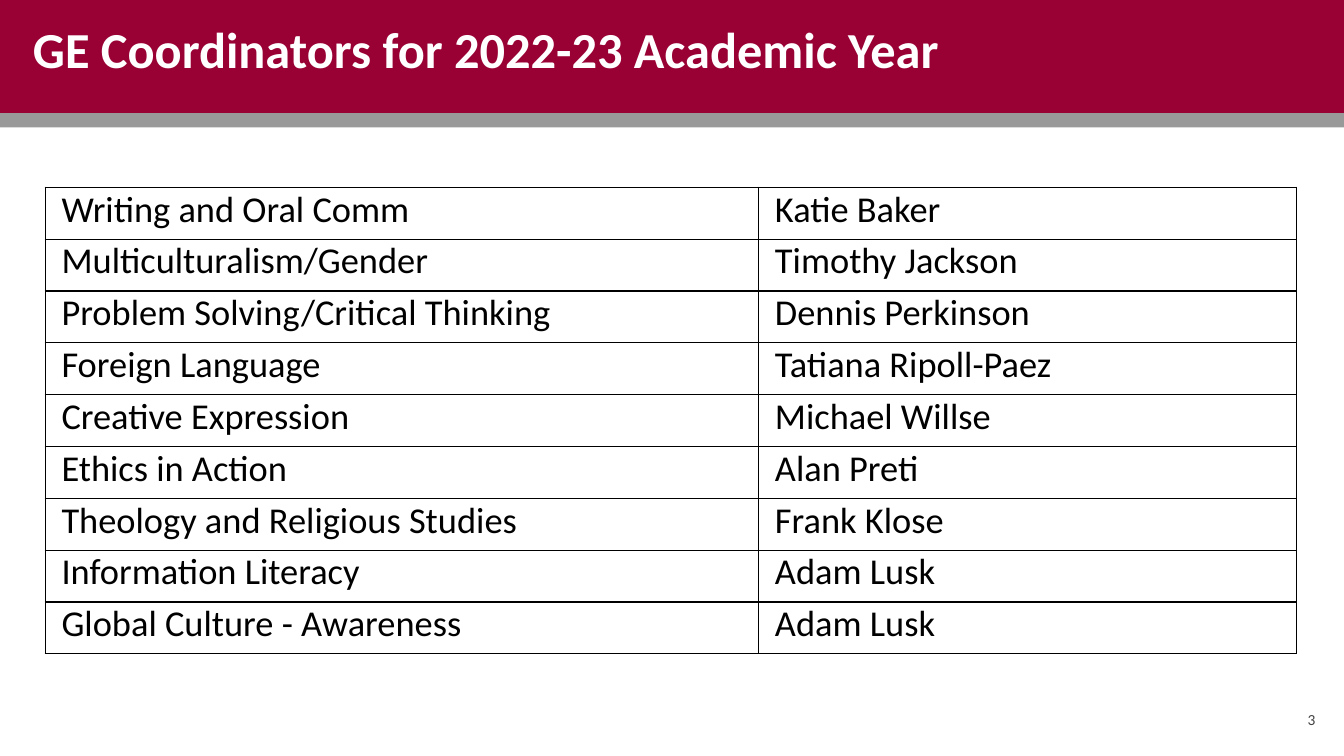
from lxml.etree import SubElement
from pptx import Presentation
from pptx.dml.color import RGBColor
from pptx.enum.shapes import MSO_SHAPE
from pptx.enum.text import MSO_ANCHOR, MSO_AUTO_SIZE, PP_ALIGN
from pptx.oxml.ns import qn
from pptx.util import Cm, Pt

COLORS = {
    "crimson": "990033",
    "gray": "999999",
    "white": "FFFFFF",
    "black": "000000",
    "page_number": "434343",
}

COORDINATORS = [
    ("Writing and Oral Comm", "Katie Baker"),
    ("Multiculturalism/Gender", "Timothy Jackson"),
    ("Problem Solving/Critical Thinking", "Dennis Perkinson"),
    ("Foreign Language", "Tatiana Ripoll-Paez"),
    ("Creative Expression", "Michael Willse"),
    ("Ethics in Action", "Alan Preti"),
    ("Theology and Religious Studies", "Frank Klose"),
    ("Information Literacy", "Adam Lusk"),
    ("Global Culture - Awareness", "Adam Lusk"),
]


class SlideBuilder:
    font_name = "Calibri"
    inset = Cm(0.25)

    def __init__(self, presentation):
        self.slide = presentation.slides.add_slide(presentation.slide_layouts[5])

    def color(self, name):
        return RGBColor.from_string(COLORS[name])

    def style(self, paragraph, size, color, bold=False):
        font = paragraph.font
        font.name = self.font_name
        font.size = Pt(size)
        font.bold = bold
        font.color.rgb = self.color(color)

    def frame(self, holder, text, anchor):
        frame = holder.text_frame
        frame.text = text
        frame.word_wrap = True
        frame.auto_size = MSO_AUTO_SIZE.NONE
        frame.vertical_anchor = anchor
        frame.margin_left = frame.margin_right = self.inset
        frame.margin_top = frame.margin_bottom = self.inset
        return frame.paragraphs[0]

    def band(self, left, top, width, height, color):
        band = self.slide.shapes.add_shape(
            MSO_SHAPE.RECTANGLE, Cm(left), Cm(top), Cm(width), Cm(height)
        )
        band.shadow.inherit = False
        band.fill.solid()
        band.fill.fore_color.rgb = self.color(color)
        band.line.fill.background()

    def title(self, text, left, top, width, height):
        title = self.slide.shapes.title
        title.left, title.top = Cm(left), Cm(top)
        title.width, title.height = Cm(width), Cm(height)
        heading = self.frame(title, text, MSO_ANCHOR.TOP)
        heading.alignment = PP_ALIGN.LEFT
        self.style(heading, 36, "white", bold=True)
        title.element.getparent().append(title.element)

    def page_number(self, text, left, top, width, height):
        box = self.slide.shapes.add_textbox(Cm(left), Cm(top), Cm(width), Cm(height))
        number = self.frame(box, text, MSO_ANCHOR.MIDDLE)
        number.alignment = PP_ALIGN.RIGHT
        number.line_spacing = 0.9
        number.space_after = Pt(6)
        self.style(number, 11, "page_number")

    def border(self, cell):
        properties = cell._tc.get_or_add_tcPr()
        for position, side in enumerate(("lnL", "lnR", "lnT", "lnB")):
            line = SubElement(properties, qn(f"a:{side}"), w=str(Pt(1)))
            fill = SubElement(line, qn("a:solidFill"))
            SubElement(fill, qn("a:srgbClr"), val=COLORS["black"])
            properties.insert(position, line)

    def table(self, rows, left, top, column_widths, height):
        table = self.slide.shapes.add_table(
            len(rows), len(column_widths),
            Cm(left), Cm(top), Cm(sum(column_widths)), Cm(height),
        ).table
        table.first_row = table.horz_banding = False
        for column, width in zip(table.columns, column_widths):
            column.width = Cm(width)
        for row, texts in zip(table.rows, rows):
            for cell, text in zip(row.cells, texts):
                cell.text = text
                cell.margin_left = cell.margin_right = Cm(0.41)
                cell.margin_top = cell.margin_bottom = 0
                cell.fill.background()
                self.border(cell)
                self.style(cell.text_frame.paragraphs[0], 26, "black")


def main():
    presentation = Presentation()
    presentation.slide_width = Cm(33.87)
    presentation.slide_height = Cm(19.05)

    builder = SlideBuilder(presentation)
    builder.band(0, 0, 33.87, 2.85, "crimson")
    builder.band(0, 2.85, 33.87, 0.36, "gray")
    builder.title("GE Coordinators for 2022-23 Academic Year", 0.58, 0.2, 31.55, 2.13)
    builder.page_number("3", 31.37, 17.58, 2.03, 1.14)
    builder.table(COORDINATORS, 1.14, 4.72, (17.98, 13.56), 11.76)

    presentation.save("out.pptx")


if __name__ == "__main__":
    main()
